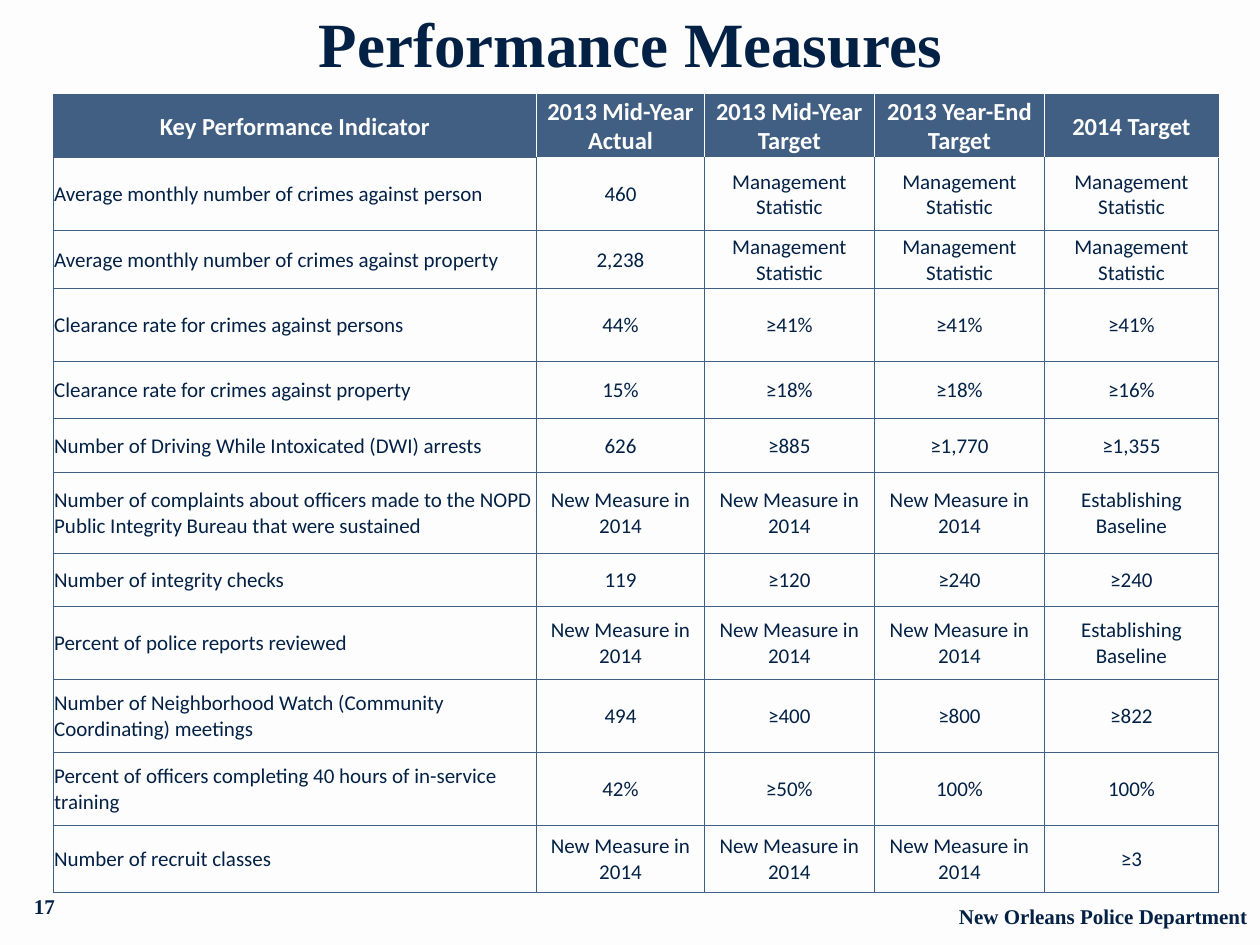
"""Build the police performance measures slide."""
from dataclasses import dataclass

from lxml import etree
from pptx import Presentation
from pptx import util as u
from pptx.dml import color
from pptx.enum import text
from pptx.oxml import ns


@dataclass(frozen=True)
class Theme:
    """Colours, fonts and type sizes of the slide."""
    paper: str = "FDFDFD"
    ink: str = "032145"
    band: str = "415F83"
    serif: str = "Times New Roman"
    sans: str = "Calibri"
    title_size: int = 36
    header_size: int = 14
    body_size: int = 12
    border_width: float = 0.5


THEME = Theme()
LEFT, CENTER, RIGHT = text.PP_ALIGN.LEFT, text.PP_ALIGN.CENTER, text.PP_ALIGN.RIGHT
MIDDLE, BOTTOM = text.MSO_ANCHOR.MIDDLE, text.MSO_ANCHOR.BOTTOM

STATISTIC = "Management Statistic"
NEW = "New Measure in 2014"
BASELINE = "Establishing Baseline"
COLUMN_WIDTHS = [3.84, 1.33, 1.35, 1.35, 1.38]
ROW_HEIGHTS = [0.5, 0.58, 0.46, 0.58, 0.45, 0.43, 0.64, 0.42, 0.58, 0.58, 0.58, 0.53]
MEASURES = [
    ["Key Performance Indicator", "2013 Mid-Year Actual", "2013 Mid-Year Target",
     "2013 Year-End Target", "2014 Target"],
    ["Average monthly number of crimes against person", "460", STATISTIC, STATISTIC, STATISTIC],
    ["Average monthly number of crimes against property", "2,238",
     STATISTIC, STATISTIC, STATISTIC],
    ["Clearance rate for crimes against persons", "44%", "≥41%", "≥41%", "≥41%"],
    ["Clearance rate for crimes against property", "15%", "≥18%", "≥18%", "≥16%"],
    ["Number of Driving While Intoxicated (DWI) arrests", "626", "≥885", "≥1,770", "≥1,355"],
    ["Number of complaints about officers made to the NOPD Public Integrity Bureau "
     "that were sustained", NEW, NEW, NEW, BASELINE],
    ["Number of integrity checks", "119", "≥120", "≥240", "≥240"],
    ["Percent of police reports reviewed", NEW, NEW, NEW, BASELINE],
    ["Number of Neighborhood Watch (Community Coordinating) meetings",
     "494", "≥400", "≥800", "≥822"],
    ["Percent of officers completing 40 hours of in-service training",
     "42%", "≥50%", "100%", "100%"],
    ["Number of recruit classes", NEW, NEW, NEW, "≥3"],
]


def write_text(frame, words, font=THEME.serif, size=THEME.body_size, ink=THEME.ink,
               bold=True, align=LEFT, anchor=MIDDLE):
    """Write one formatted paragraph into a text frame."""
    frame.word_wrap = True
    frame.vertical_anchor = anchor
    para = frame.paragraphs[0]
    para.alignment = align
    span = para.add_run()
    span.text = words
    span.font.name = font
    span.font.size = u.Pt(size)
    span.font.bold = bold
    span.font.color.rgb = color.RGBColor.from_string(ink)


def add_title(page, words):
    """Place and fill the title placeholder."""
    title = page.shapes.title
    title.left, title.top = u.Inches(0.17), u.Inches(0)
    title.width, title.height = u.Inches(9.67), u.Inches(0.67)
    write_text(title.text_frame, words, size=THEME.title_size, align=CENTER)


def add_footer(page, words, left, top, width, height, align=LEFT):
    """Add a bottom-anchored footer text box."""
    box = page.shapes.add_textbox(*map(u.Inches, (left, top, width, height)))
    write_text(box.text_frame, words, align=align, anchor=BOTTOM)


def set_borders(cell, **sides):
    """Draw the borders of a cell, given a colour for each side."""
    properties = cell._tc.get_or_add_tcPr()
    for side, ink in sides.items():
        line = etree.SubElement(properties, ns.qn(f"a:ln{side}"),
                                w=str(u.Pt(THEME.border_width)))
        fill = etree.SubElement(line, ns.qn("a:solidFill"))
        etree.SubElement(fill, ns.qn("a:srgbClr"), val=ink)


def format_cell(cell, words, row, column):
    """Fill one table cell according to its row and column."""
    header, first, last = row == 0, column == 0, column == len(COLUMN_WIDTHS) - 1
    cell.margin_left = cell.margin_right = cell.margin_top = u.Inches(0.01)
    cell.margin_bottom = 0
    cell.vertical_anchor = MIDDLE
    set_borders(
        cell,
        L=THEME.paper if header and not first else THEME.band,
        R=THEME.paper if header and not last else THEME.band,
        T=THEME.paper if row == 1 and not first else THEME.band,
        B=THEME.paper if header and not first else THEME.band,
    )
    if header:
        cell.fill.solid()
        cell.fill.fore_color.rgb = color.RGBColor.from_string(THEME.band)
    else:
        cell.fill.background()
    write_text(cell.text_frame, words, font=THEME.sans, bold=header,
               size=THEME.header_size if header else THEME.body_size,
               ink=THEME.paper if header else THEME.ink,
               align=LEFT if first and not header else CENTER)


def add_measures(page):
    """Add the table of performance measures."""
    table = page.shapes.add_table(
        len(ROW_HEIGHTS), len(COLUMN_WIDTHS), u.Inches(0.42), u.Inches(0.75),
        u.Inches(sum(COLUMN_WIDTHS)), u.Inches(sum(ROW_HEIGHTS))).table
    table.horz_banding = False
    for column, width in zip(table.columns, COLUMN_WIDTHS):
        column.width = u.Inches(width)
    for row, height in zip(table.rows, ROW_HEIGHTS):
        row.height = u.Inches(height)
    for row, values in enumerate(MEASURES):
        for column, words in enumerate(values):
            format_cell(table.cell(row, column), words, row, column)


def main():
    """Build and save the deck."""
    deck = Presentation()
    deck.slide_width, deck.slide_height = u.Inches(10), u.Inches(7.5)
    page = deck.slides.add_slide(deck.slide_layouts[5])
    page.background.fill.solid()
    page.background.fill.fore_color.rgb = color.RGBColor.from_string(THEME.paper)
    add_title(page, "Performance Measures")
    add_footer(page, "17", 0.17, 6.9, 1.25, 0.44)
    add_measures(page)
    add_footer(page, "New Orleans Police Department", 7.15, 7.17, 2.85, 0.25, align=RIGHT)
    deck.save("out.pptx")


if __name__ == "__main__":
    main()
